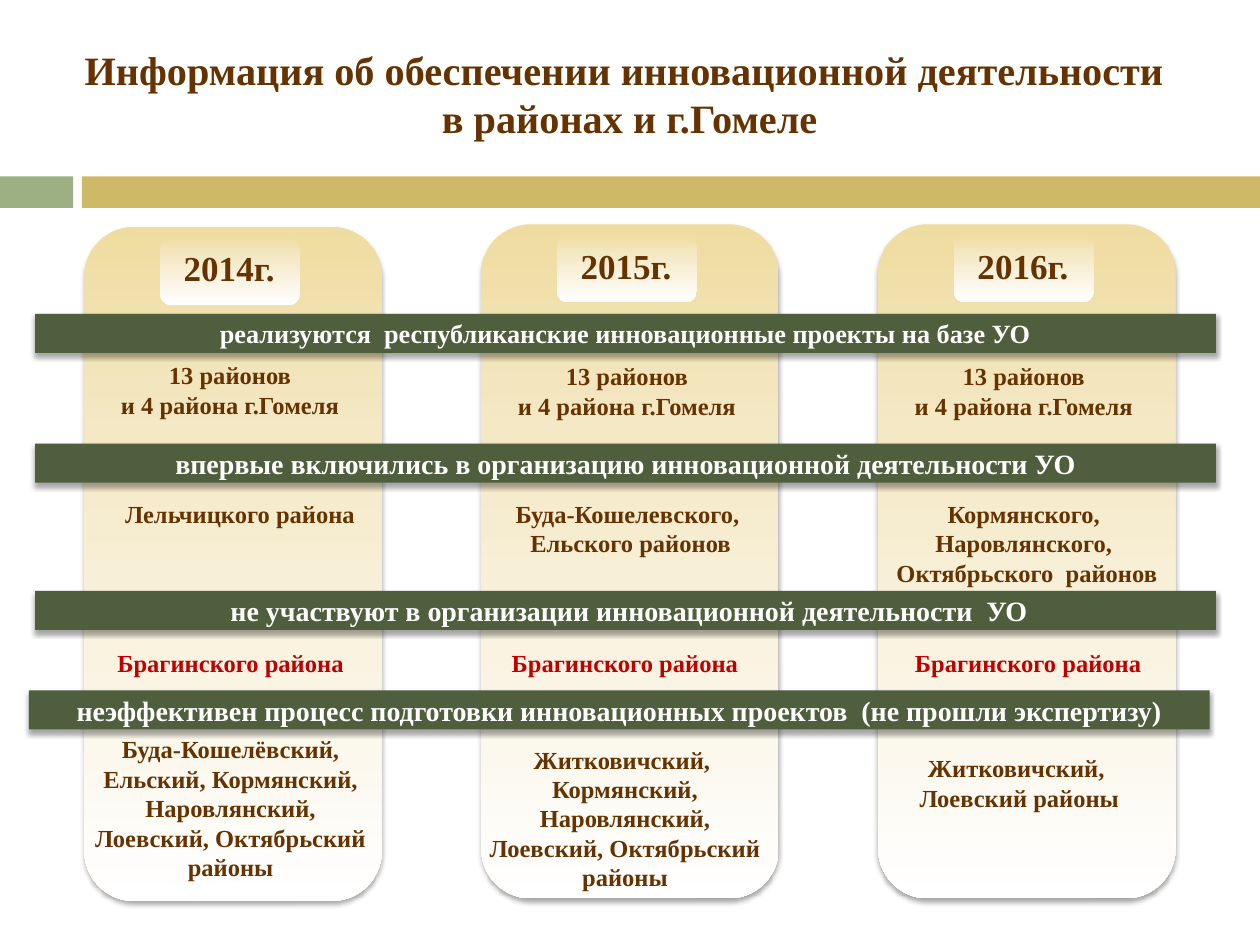
import pptx
import pptx.dml.color
import pptx.enum.shapes
import pptx.enum.text
import pptx.oxml
import pptx.oxml.ns
import pptx.util
from pptx.util import Inches

COLORS = {
    "sage": "9CB084",
    "gold": "CEB966",
    "brown": "663300",
    "red": "C00000",
    "green": "4F5E3C",
    "white": "FFFFFF",
    "sand": "EFDCA0",
    "cream": "F4E8C5",
    "shadow": "000000",
}
FONT = "Times New Roman"
SHAPES = pptx.enum.shapes.MSO_SHAPE
ALIGN = pptx.enum.text.PP_ALIGN
NS = pptx.oxml.ns.nsdecls("a")

# Year, left and top of each card
CARDS = [("2014г.", 0.67, 1.80), ("2015г.", 3.82, 1.78), ("2016г.", 6.97, 1.78)]

# Band heading, left, top and text size
BANDS = [
    ("реализуются  республиканские инновационные проекты на базе УО", 0.28, 2.49, 15),
    ("впервые включились в организацию инновационной деятельности УО", 0.28, 3.52, 16),
    (" не участвуют в организации инновационной деятельности  УО", 0.28, 4.69, 16),
    ("неэффективен процесс подготовки инновационных проектов  (не прошли экспертизу)",
     0.23, 5.48, 16),
]

# Text, left, top, width and height of each note, by band
DISTRICT_COUNT = "13 районов \nи 4 района г.Гомеля "
ABSENT = "Брагинского района"
NOTES = [
    (DISTRICT_COUNT, 0.59, 2.81, 2.52, 0.57),
    (DISTRICT_COUNT, 3.82, 2.82, 2.36, 0.57),
    (DISTRICT_COUNT, 6.97, 2.82, 2.36, 0.57),
    ("Лельчицкого района ", 0.88, 3.91, 2.05, 0.34),
    ("Буда-Кошелевского, \nЕльского районов", 3.98, 3.91, 2.05, 0.57),
    ("Кормянского, \nНаровлянского, \nОктябрьского  районов", 6.97, 3.91, 2.36, 0.81),
    (ABSENT, 0.62, 5.09, 2.42, 0.34),
    (ABSENT, 3.75, 5.09, 2.42, 0.34),
    (ABSENT, 6.95, 5.09, 2.42, 0.34),
    ("Буда-Кошелёвский,\nЕльский, Кормянский, Наровлянский,\nЛоевский, Октябрьский районы",
     0.62, 5.78, 2.42, 1.28),
    ("Житковичский, \nКормянский, Наровлянский, Лоевский, Октябрьский районы",
     3.75, 5.86, 2.42, 1.28),
    ("Житковичский, \nЛоевский районы", 6.88, 5.93, 2.42, 0.57),
]


def rgb(name):
    return pptx.dml.color.RGBColor.from_string(COLORS[name])


def write(frame, text, size=14, color="brown", align=ALIGN.CENTER, wrap=True):
    """Fill a text frame with bold text, one paragraph per line."""
    frame.word_wrap = wrap
    for index, line in enumerate(text.split("\n")):
        paragraph = frame.paragraphs[0] if index == 0 else frame.add_paragraph()
        paragraph.alignment = align
        run = paragraph.add_run()
        run.text = line
        run.font.name = FONT
        run.font.size = pptx.util.Pt(size)
        run.font.bold = True
        run.font.color.rgb = rgb(color)


def add_label(slide, text, left, top, width, height, **style):
    label = slide.shapes.add_textbox(Inches(left), Inches(top), Inches(width), Inches(height))
    write(label.text_frame, text, **style)


def add_block(slide, kind, left, top, width, height, color=None):
    block = slide.shapes.add_shape(
        kind, Inches(left), Inches(top), Inches(width), Inches(height))
    block.shadow.inherit = False
    block.line.fill.background()
    if color:
        block.fill.solid()
        block.fill.fore_color.rgb = rgb(color)
    return block


def add_fade(block, middle):
    """Fade from sand at the top to white at the bottom."""
    block.fill.gradient()
    block.fill.gradient_angle = 270
    stops = block._element.spPr.find(".//" + pptx.oxml.ns.qn("a:gsLst"))
    for stop in list(stops):
        stops.remove(stop)
    for percent, name in ((0, "sand"), (middle, "cream"), (100, "white")):
        stops.append(pptx.oxml.parse_xml(
            f'<a:gs {NS} pos="{percent * 1000}"><a:srgbClr val="{COLORS[name]}"/></a:gs>'))


def add_shadow(block):
    effects = block._element.spPr.find(pptx.oxml.ns.qn("a:effectLst"))
    blur, distance = pptx.util.Pt(3), pptx.util.Pt(2)
    effects.append(pptx.oxml.parse_xml(
        f'<a:outerShdw {NS} blurRad="{blur}" dist="{distance}" dir="5400000" rotWithShape="0">'
        f'<a:srgbClr val="{COLORS["shadow"]}"><a:alpha val="35000"/></a:srgbClr>'
        '</a:outerShdw>'))


def add_card(slide, year, left, top):
    card = add_block(slide, SHAPES.ROUNDED_RECTANGLE, left, top, 2.36, 5.35)
    add_fade(card, 30)
    add_shadow(card)
    year_tab = add_block(slide, SHAPES.ROUNDED_RECTANGLE, left + 0.6, top + 0.08, 1.11, 0.54)
    add_fade(year_tab, 29)
    add_label(slide, year, left + 0.69, top + 0.11, 0.93, 0.44,
              size=20, align=ALIGN.LEFT, wrap=False)


def add_band(slide, heading, left, top, size):
    band = add_block(slide, SHAPES.RECTANGLE, left, top, 9.37, 0.31, "green")
    add_shadow(band)
    band.text_frame.vertical_anchor = pptx.enum.text.MSO_ANCHOR.MIDDLE
    write(band.text_frame, heading, size=size, color="white")


def main():
    deck = pptx.Presentation()
    deck.slide_width, deck.slide_height = Inches(10), Inches(7.5)
    slide = deck.slides.add_slide(deck.slide_layouts[6])

    # Title and the stripe below it
    add_block(slide, SHAPES.RECTANGLE, 0, 1.4, 0.58, 0.25, "sage")
    add_block(slide, SHAPES.RECTANGLE, 0.65, 1.4, 9.35, 0.25, "gold")
    add_label(slide, "Информация об обеспечении инновационной деятельности \n"
              "в районах и г.Гомеле", 0, 0.31, 10, 0.88, size=23)

    # Year cards, bands across them, and notes on top
    for card in CARDS:
        add_card(slide, *card)
    for band in BANDS:
        add_band(slide, *band)
    for note in NOTES:
        add_label(slide, *note, color="red" if note[0] == ABSENT else "brown")

    deck.save("out.pptx")


if __name__ == "__main__":
    main()
